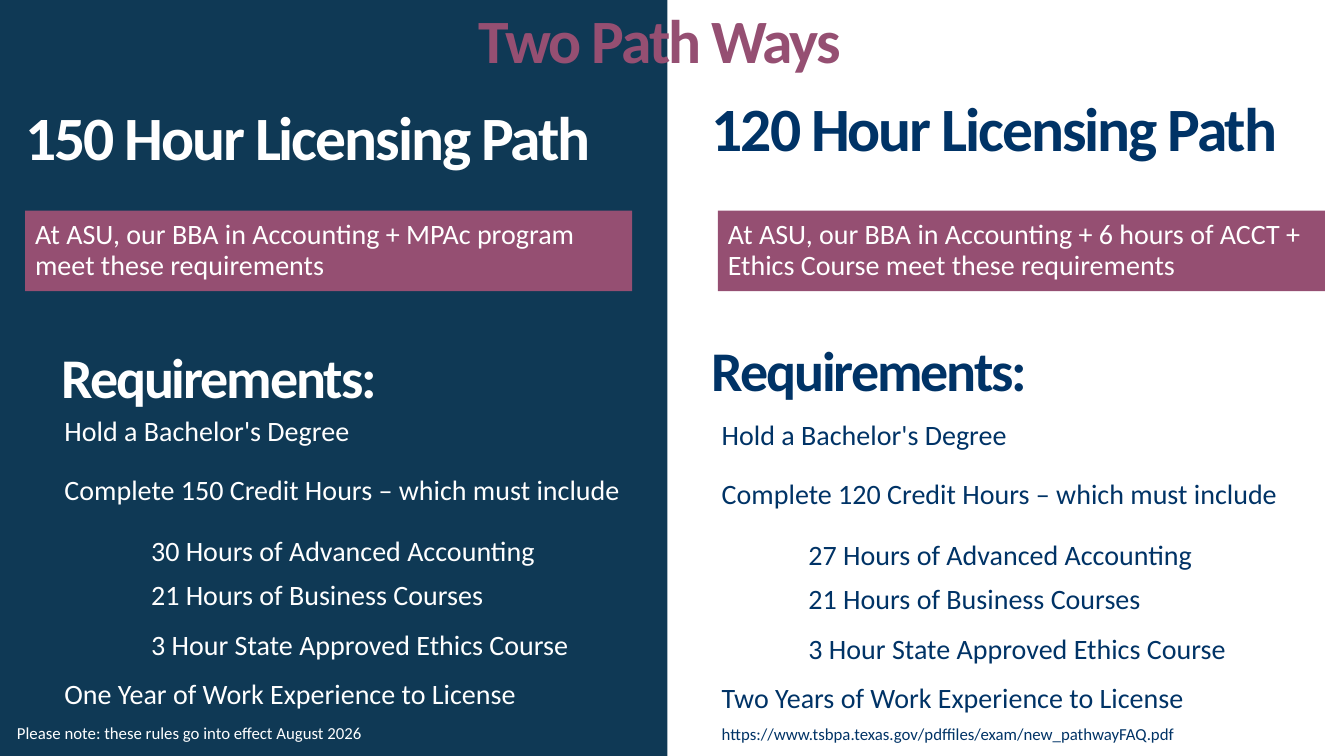
from pptx import Presentation
from pptx.dml.color import RGBColor
from pptx.enum.shapes import MSO_SHAPE
from pptx.enum.text import MSO_ANCHOR, MSO_AUTO_SIZE, PP_ALIGN
from pptx.util import Inches, Pt

COLORS = {"panel": "0F3955", "plum": "954F72", "navy": "003366", "white": "FFFFFF"}
ROW_H = 0.8
INDENT = 0.86
ROW_TOPS = [3.89, 4.48, 5.08, 5.52, 6.01, 6.5]
ROW_WIDTHS = [4.35, 6.02, 4.35, 4.35, 4.35, 5.29]
ROW_LEVELS = [0, 0, 1, 1, 1, 0]

PATHS = [
    {
        "x": 0.54, "dy": 0, "color": "white",
        "title": "150 Hour Licensing Path", "title_at": (0.25, 0.24),
        "banner": "At ASU, our BBA in Accounting + MPAc program meet these requirements",
        "banner_x": 0.25,
        "heading_at": (0.61, 3.32),
        "rows": [
            "Hold a Bachelor's Degree",
            "Complete 150 Credit Hours – which must include",
            "30 Hours of Advanced Accounting",
            "21 Hours of Business Courses",
            "3 Hour State Approved Ethics Course",
            "One Year of Work Experience to License",
        ],
        "note": "Please note: these rules go into effect August 2026",
        "note_at": (0.07, 6.88),
    },
    {
        "x": 7.06, "dy": 0.04, "color": "navy",
        "title": "120 Hour Licensing Path", "title_at": (7.06, 0.15),
        "banner": "At ASU, our BBA in Accounting + 6 hours of ACCT + Ethics Course meet these requirements",
        "banner_x": 7.12,
        "heading_at": (7.06, 3.25),
        "rows": [
            "Hold a Bachelor's Degree",
            "Complete 120 Credit Hours – which must include",
            "27 Hours of Advanced Accounting",
            "21 Hours of Business Courses",
            "3 Hour State Approved Ethics Course",
            "Two Years of Work Experience to License",
        ],
        "note": "https://www.tsbpa.texas.gov/pdffiles/exam/new_pathwayFAQ.pdf",
        "note_at": (7.06, 6.89),
    },
]


def rgb(name):
    return RGBColor.from_string(COLORS[name])


def write(sp, text, color, size=20, heading=False):
    tf = sp.text_frame
    tf.text = text
    tf.word_wrap = True
    tf.auto_size = MSO_AUTO_SIZE.NONE
    tf.vertical_anchor = MSO_ANCHOR.BOTTOM if heading else MSO_ANCHOR.MIDDLE
    tf.margin_left = Inches(0 if heading else 0.1)
    tf.margin_right = Inches(0.1)
    tf.margin_top = tf.margin_bottom = Inches(0.05)
    p = tf.paragraphs[0]
    p.alignment = PP_ALIGN.LEFT
    p.line_spacing = 0.9
    p.space_before = Pt(0)
    r = p.runs[0]
    r.font.name = "Calibri"
    r.font.size = Pt(size)
    r.font.bold = heading
    r.font.color.rgb = rgb(color)
    if heading:
        r.font._element.set("spc", "-150")


def add_text(slide, x, y, w, h, text, color, **style):
    sp = slide.shapes.add_textbox(Inches(x), Inches(y), Inches(w), Inches(h))
    write(sp, text, color, **style)


def add_rect(slide, x, y, w, h, fill):
    sp = slide.shapes.add_shape(MSO_SHAPE.RECTANGLE, Inches(x), Inches(y), Inches(w), Inches(h))
    sp.shadow.inherit = False
    sp.fill.solid()
    sp.fill.fore_color.rgb = rgb(fill)
    sp.line.fill.background()
    return sp


def set_title(slide, x, y, w, h, text, color):
    sp = slide.shapes.title
    sp.left, sp.top, sp.width, sp.height = Inches(x), Inches(y), Inches(w), Inches(h)
    write(sp, text, color, size=44, heading=True)


def add_path(slide, path):
    color = path["color"]
    banner = add_rect(slide, path["banner_x"], 2.09, 6.02, ROW_H, "plum")
    write(banner, path["banner"], "white")
    add_text(slide, *path["heading_at"], 3.54, ROW_H, "Requirements:", color, size=40, heading=True)
    for text, top, width, level in zip(path["rows"], ROW_TOPS, ROW_WIDTHS, ROW_LEVELS):
        add_text(slide, path["x"] + level * INDENT, top + path["dy"], width, ROW_H, text, color)
    add_text(slide, *path["note_at"], 5.29, ROW_H, path["note"], color, size=12)


def main():
    prs = Presentation()
    prs.slide_width, prs.slide_height = Inches(13.33), Inches(7.5)
    slide = prs.slides.add_slide(prs.slide_layouts[5])
    panel = add_rect(slide, 0, 0, 6.62, 7.5, "panel")
    slide.shapes.title.element.addprevious(panel.element)

    left, right = PATHS
    set_title(slide, *left["title_at"], 6.02, 1.53, left["title"], left["color"])
    add_text(slide, *right["title_at"], 6.02, 1.53, right["title"], right["color"], size=44, heading=True)
    add_text(slide, 4.75, -0.04, 3.99, 0.85, "Two Path Ways", "plum", size=44, heading=True)
    for path in PATHS:
        add_path(slide, path)
    prs.save("out.pptx")


if __name__ == "__main__":
    main()
